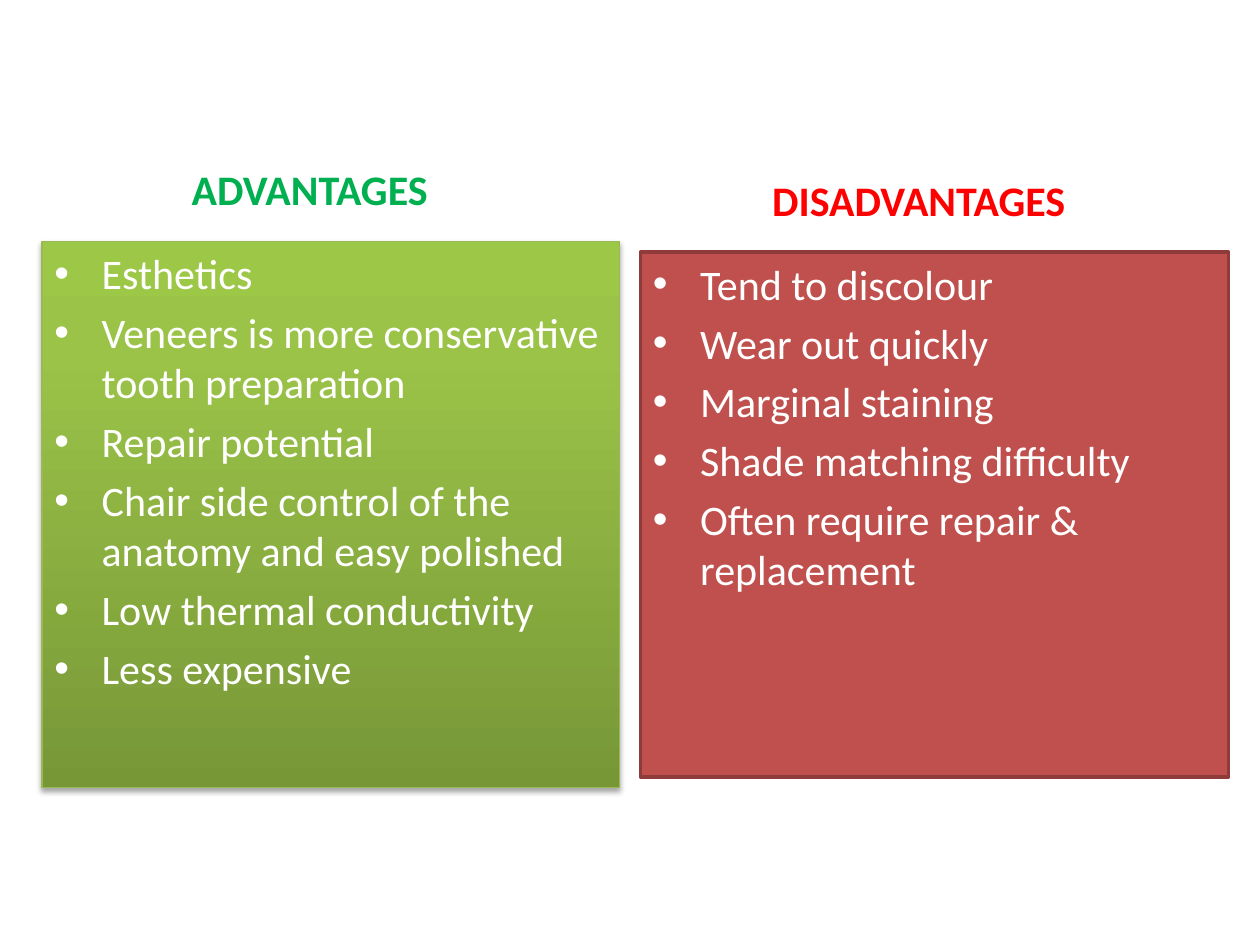
"""Build a slide that compares advantages and disadvantages in two panels."""
import copy

import pptx
import pptx.dml.color
import pptx.enum.shapes
import pptx.enum.text
import pptx.oxml
import pptx.oxml.ns
import pptx.util

Pt = pptx.util.Pt
qn = pptx.oxml.ns.qn


def rgb(code):
    return pptx.dml.color.RGBColor.from_string(code)


class Deck:
    font = "Calibri"
    size = 24
    gap = 4.8
    indent = 27

    def __init__(self, slide):
        self.slide = slide

    def add_run(self, p, text, color, bold=False):
        r = p.add_run()
        r.text = text
        r.font.name = self.font
        r.font.size = Pt(self.size)
        r.font.bold = bold
        r.font.color.rgb = rgb(color)

    def heading(self, box, text, color):
        sp = self.slide.shapes.add_textbox(*map(Pt, box))
        tf = sp.text_frame
        tf.word_wrap = True
        tf.vertical_anchor = pptx.enum.text.MSO_ANCHOR.BOTTOM
        p = tf.paragraphs[0]
        p.alignment = pptx.enum.text.PP_ALIGN.CENTER
        self.add_run(p, text, color, bold=True)

    def bullet(self, p):
        pPr = p._p.get_or_add_pPr()
        pPr.set("marL", str(Pt(self.indent)))
        pPr.set("indent", str(-Pt(self.indent)))
        font = pptx.oxml.parse_xml(f'<a:buFont {pptx.oxml.ns.nsdecls("a")} typeface="Arial"/>')
        char = pptx.oxml.parse_xml(f'<a:buChar {pptx.oxml.ns.nsdecls("a")} char="•"/>')
        pPr.extend([font, char])

    def panel(self, box, items, line, width):
        sp = self.slide.shapes.add_shape(
            pptx.enum.shapes.MSO_SHAPE.RECTANGLE, *map(Pt, box))
        sp.shadow.inherit = False
        sp.line.color.rgb = rgb(line)
        sp.line.width = Pt(width)
        tf = sp.text_frame
        tf.word_wrap = True
        tf.vertical_anchor = pptx.enum.text.MSO_ANCHOR.TOP
        for i, item in enumerate(items):
            p = tf.add_paragraph() if i else tf.paragraphs[0]
            self.bullet(p)
            p.alignment = pptx.enum.text.PP_ALIGN.LEFT
            p.space_before = Pt(self.gap if i else 0)
            self.add_run(p, item, "FFFFFF")
        return sp

    def solid(self, sp, color):
        sp.fill.solid()
        sp.fill.fore_color.rgb = rgb(color)

    def gradient(self, sp, stops, angle):
        sp.fill.gradient()
        sp.fill.gradient_angle = angle
        stop_list = sp._element.spPr.find(".//" + qn("a:gsLst"))
        while len(stop_list) < len(stops):
            stop_list.append(copy.deepcopy(stop_list[0]))
        for stop, (position, color) in zip(sp.fill.gradient_stops, stops):
            stop.position = position
            stop.color.rgb = rgb(color)

    def drop_shadow(self, sp, blur, distance, opacity):
        effects = sp._element.spPr.find(qn("a:effectLst"))
        effects.append(pptx.oxml.parse_xml(
            f'<a:outerShdw {pptx.oxml.ns.nsdecls("a")} blurRad="{Pt(blur)}" '
            f'dist="{Pt(distance)}" dir="5400000" rotWithShape="0">'
            f'<a:srgbClr val="000000"><a:alpha val="{opacity * 1000}"/></a:srgbClr>'
            '</a:outerShdw>'))


def main():
    prs = pptx.Presentation()
    prs.slide_width, prs.slide_height = Pt(720), Pt(540)
    s = prs.slides.add_slide(prs.slide_layouts[6])
    deck = Deck(s)

    deck.heading((0, 66, 354, 60), "ADVANTAGES", "00B050")
    advantages = deck.panel((24, 138, 330, 312), [
        "Esthetics",
        "Veneers is more conservative tooth preparation",
        "Repair potential",
        "Chair side control of the anatomy and easy polished",
        "Low thermal conductivity",
        "Less expensive",
    ], "98B955", 0.75)
    deck.gradient(advantages, [(0, "779737"), (0.8, "9BC348"), (1, "9DC746")], 90)
    deck.drop_shadow(advantages, 3.1, 1.8, 35)

    deck.heading((366, 84, 318, 48), "DISADVANTAGES", "FF0000")
    disadvantages = deck.panel((366, 144, 336, 300), [
        "Tend to discolour",
        "Wear out quickly",
        "Marginal staining",
        "Shade matching difficulty",
        "Often require repair & replacement",
    ], "8E3B39", 2)
    deck.solid(disadvantages, "C0504D")

    prs.save("out.pptx")


if __name__ == "__main__":
    main()
